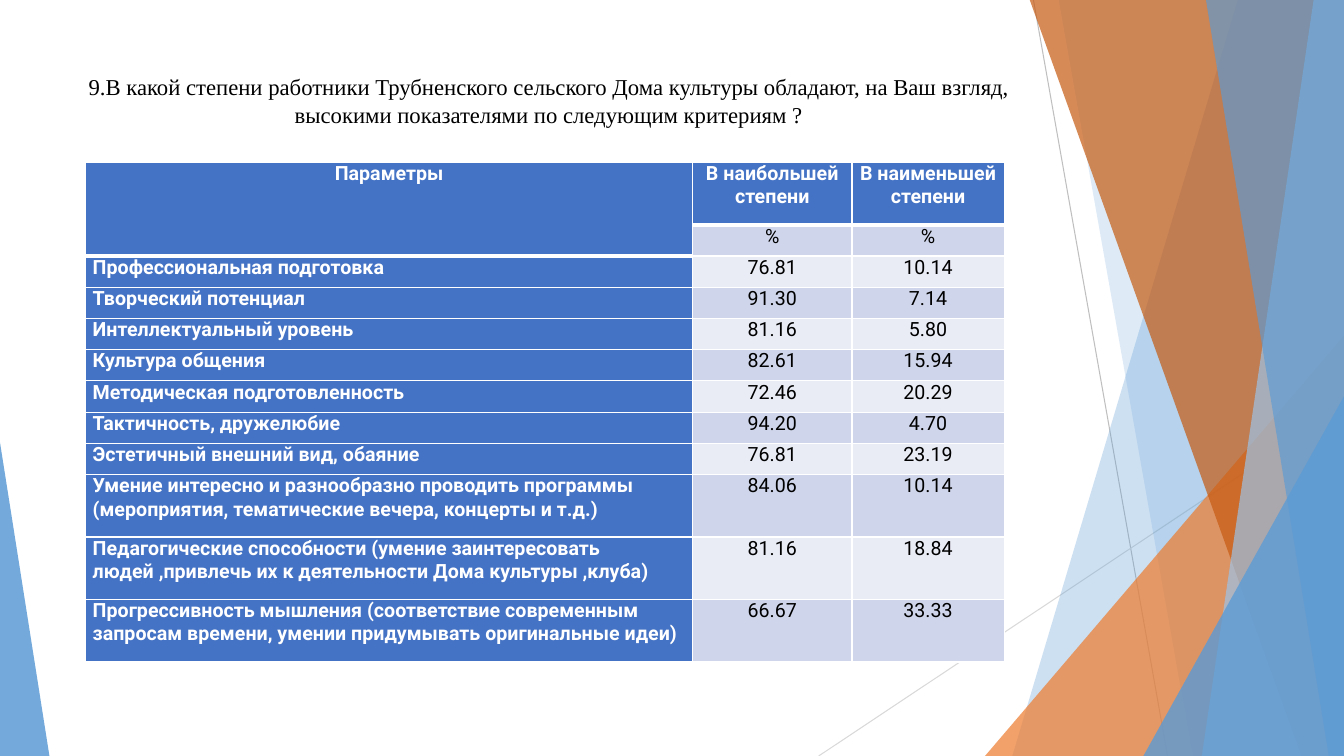
"""Builds the survey slide on how culture centre staff rate by each criterion."""
from lxml import etree
from pptx import Presentation
from pptx.dml.color import RGBColor
from pptx.enum.shapes import MSO_CONNECTOR, MSO_SHAPE
from pptx.enum.text import MSO_ANCHOR, PP_ALIGN
from pptx.oxml.ns import qn
from pptx.util import Inches, Pt

STRAIGHT = MSO_CONNECTOR.STRAIGHT
TRIANGLE = MSO_SHAPE.ISOSCELES_TRIANGLE
TOP = MSO_ANCHOR.TOP
LEFT, CENTER = PP_ALIGN.LEFT, PP_ALIGN.CENTER

TITLE = ("9.В какой степени работники Трубненского сельского Дома культуры обладают, "
         "на Ваш взгляд, высокими показателями по следующим критериям ?")
ROWS = [
    ("Параметры", "В наибольшей степени", "В наименьшей степени"),
    ("", "%", "%"),
    ("Профессиональная подготовка", "76.81", "10.14"),
    ("Творческий потенциал", "91.30", "7.14"),
    ("Интеллектуальный уровень", "81.16", "5.80"),
    ("Культура общения", "82.61", "15.94"),
    ("Методическая подготовленность", "72.46", "20.29"),
    ("Тактичность, дружелюбие", "94.20", "4.70"),
    ("Эстетичный внешний вид, обаяние", "76.81", "23.19"),
    ("Умение интересно и разнообразно проводить программы "
     "(мероприятия, тематические вечера, концерты и т.д.)", "84.06", "10.14"),
    ("Педагогические способности (умение заинтересовать людей ,"
     "привлечь их к деятельности Дома культуры ,клуба)", "81.16", "18.84"),
    ("Прогрессивность мышления (соответствие современным запросам времени, "
     "умении придумывать оригинальные идеи)", "66.67", "33.33"),
]
COL_WIDTHS = (6.02, 1.58, 1.51)
ROW_HEIGHT = 0.31
TALL_ROWS = {0, 9, 10, 11}

COLORS = {
    "white": "FFFFFF", "black": "000000", "header": "4472C4",
    "odd": "CFD5EA", "even": "E9EBF5", "blue": "5B9BD5", "pale": "9DC3E6",
    "orange": "ED7D31", "rust": "C55A11", "gray": "BFBFBF", "light": "D9D9D9",
}
WIDTH, HEIGHT, BAND_TOP = 13.33, 7.5, -0.01
LINES = [
    ((10.25, 0), (11.58, HEIGHT), "gray"),
    ((WIDTH, 4.03), (8.12, HEIGHT), "light"),
]
# Bands: top-left x, bottom-left x. Triangles: left, top, width, apex.
DECOR = [
    ("band", (12.28, 10.04), "blue", 30),
    ("band", (10.5, 11.83), "blue", 20),
    ("triangle", (9.77, 3.33, 3.56, 1), "orange", 72),
    ("band", (10.21, 12.91), "rust", 70),
    ("band", (13.03, 11.92), "pale", 70),
    ("band", (11.96, 13.18), "blue", 65),
    ("triangle", (11.34, 3.93, 1.99, 1), "blue", 80),
    ("triangle", (0, 4.39, 0.49, 0), "blue", 85),
]


def rgb(name):
    return RGBColor.from_string(COLORS[name])


def add_line(s, start, end, color):
    line = s.shapes.add_connector(STRAIGHT, *map(Inches, start + end))
    line.line.color.rgb = rgb(color)
    line.line.width = Pt(0.75)
    etree.SubElement(line._element.spPr, qn("a:effectLst"))


def add_band(s, top_x, bottom_x):
    points = [(Inches(x), Inches(y)) for x, y in (
        (top_x, BAND_TOP), (WIDTH, BAND_TOP), (WIDTH, HEIGHT), (bottom_x, HEIGHT))]
    builder = s.shapes.build_freeform(*points[0])
    builder.add_line_segments(points[1:], close=True)
    return builder.convert_to_shape()


def add_triangle(s, left, top, width, apex):
    sp = s.shapes.add_shape(TRIANGLE, *map(Inches, (left, top, width, HEIGHT - top)))
    sp.adjustments[0] = apex
    return sp


def paint(sp, color, opacity):
    sp.shadow.inherit = False
    sp.fill.solid()
    sp.fill.fore_color.rgb = rgb(color)
    sp.line.fill.background()
    tint = sp._element.spPr.find(qn("a:solidFill"))[0]
    etree.SubElement(tint, qn("a:alpha"), val=str(opacity * 1000))


def format_text(p, font, size, color, bold, align):
    p.alignment = align
    for r in p.runs:
        r.font.name = font
        r.font.size = Pt(size)
        r.font.bold = bold
        r.font.color.rgb = rgb(color)


def set_borders(cell, bottom_width):
    props = cell._tc.get_or_add_tcPr()
    widths = {"lnL": 1, "lnR": 1, "lnT": 1, "lnB": bottom_width}
    for i, (side, width) in enumerate(widths.items()):
        edge = etree.Element(qn("a:" + side), w=str(Pt(width)))
        fill = etree.SubElement(edge, qn("a:solidFill"))
        etree.SubElement(fill, qn("a:srgbClr"), val=COLORS["white"])
        props.insert(i, edge)


def add_title(s):
    tf = s.shapes.add_textbox(*map(Inches, (0.74, 0.67, 9.4, 0.94))).text_frame
    tf.word_wrap = True
    tf.vertical_anchor = TOP
    p = tf.paragraphs[0]
    p.text = TITLE
    p.line_spacing = Pt(20)
    format_text(p, "Times New Roman", 16.2, "black", False, CENTER)


def add_ratings(s):
    heights = [ROW_HEIGHT * (2 if i in TALL_ROWS else 1) for i in range(len(ROWS))]
    frame = s.shapes.add_table(
        len(ROWS), len(COL_WIDTHS), Inches(0.85), Inches(1.61),
        Inches(sum(COL_WIDTHS)), Inches(sum(heights)))
    table = frame.table
    for column, width in zip(table.columns, COL_WIDTHS):
        column.width = Inches(width)
    for i, (values, height) in enumerate(zip(ROWS, heights)):
        table.rows[i].height = Inches(height)
        for j, value in enumerate(values):
            cell = table.cell(i, j)
            heading = i == 0 or j == 0
            cell.margin_left = cell.margin_right = Inches(0.07)
            cell.margin_top = cell.margin_bottom = 0
            cell.fill.solid()
            cell.fill.fore_color.rgb = rgb(
                "header" if heading else "odd" if i % 2 else "even")
            set_borders(cell, 3 if i == 0 or (i, j) == (1, 0) else 1)
            cell.text = value
            format_text(cell.text_frame.paragraphs[0], "Roboto", 14,
                        "white" if heading else "black", heading,
                        LEFT if j == 0 and i > 0 else CENTER)
    table.cell(0, 0).merge(table.cell(1, 0))


def main():
    prs = Presentation()
    prs.slide_width, prs.slide_height = Inches(WIDTH), Inches(HEIGHT)
    s = prs.slides.add_slide(prs.slide_layouts[6])
    for start, end, color in LINES:
        add_line(s, start, end, color)
    makers = {"band": add_band, "triangle": add_triangle}
    for kind, geometry, color, opacity in DECOR:
        paint(makers[kind](s, *geometry), color, opacity)
    add_title(s)
    add_ratings(s)
    prs.save("out.pptx")


if __name__ == "__main__":
    main()
